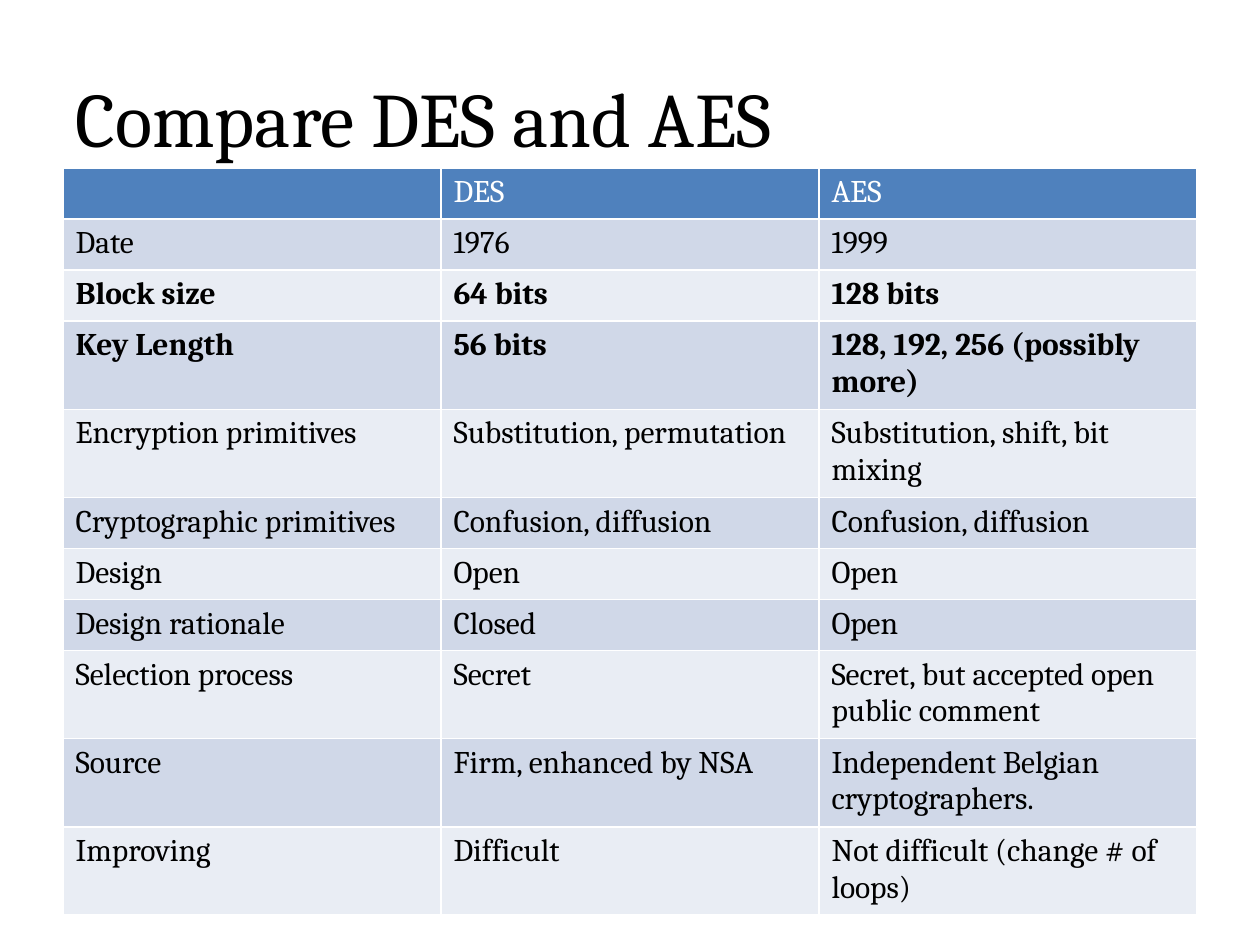
from typing import NamedTuple

from pptx import Presentation
from pptx.dml.color import RGBColor
from pptx.enum.text import MSO_ANCHOR
from pptx.util import Emu, Pt

PX = 914400 // 126
FONT = "Cambria"
COLORS = {
    "header": "4F81BD",
    "odd": "D0D8E8",
    "even": "E9EDF4",
    "light": "FFFFFF",
    "dark": "000000",
}


class Box(NamedTuple):
    x: int
    y: int
    w: int
    h: int


class Row(NamedTuple):
    topic: str
    des: str
    aes: str
    bold: bool = False

    def texts(self) -> tuple[str, str, str]:
        return self.topic, self.des, self.aes


TITLE = Box(63, 38, 1134, 157)
TABLE = Box(63, 168, 1134, 561)
ROWS = [
    Row("", "DES", "AES"),
    Row("Date", "1976", "1999"),
    Row("Block size", "64 bits", "128 bits", True),
    Row("Key Length", "56 bits", "128, 192, 256 (possibly more)", True),
    Row("Encryption primitives", "Substitution, permutation",
        "Substitution, shift, bit mixing"),
    Row("Cryptographic primitives", "Confusion, diffusion", "Confusion, diffusion"),
    Row("Design", "Open", "Open"),
    Row("Design rationale", "Closed", "Open"),
    Row("Selection process", "Secret", "Secret, but accepted open public comment"),
    Row("Source", "Firm, enhanced by NSA", "Independent Belgian cryptographers."),
    Row("Improving", "Difficult", "Not difficult (change # of loops)"),
]


def px(n: int) -> Emu:
    return Emu(n * PX)


def rgb(name: str) -> RGBColor:
    return RGBColor.from_string(COLORS[name])


def style(p, size: int, color: str, bold: bool = False) -> None:
    p.font.name = FONT
    p.font.size = Pt(size)
    p.font.bold = bold
    p.font.color.rgb = rgb(color)


def add_title(s, box: Box, text: str) -> None:
    tf = s.shapes.add_textbox(*map(px, box)).text_frame
    tf.word_wrap = True
    tf.vertical_anchor = MSO_ANCHOR.MIDDLE
    p = tf.paragraphs[0]
    p.text = text
    style(p, 44, "dark")


def add_comparison(s, box: Box, rows: list[Row]) -> None:
    table = s.shapes.add_table(len(rows), 3, *map(px, box)).table
    for i, row in enumerate(rows):
        fill = "header" if i == 0 else "odd" if i % 2 else "even"
        for cell, text in zip(table.rows[i].cells, row.texts()):
            cell.fill.solid()
            cell.fill.fore_color.rgb = rgb(fill)
            p = cell.text_frame.paragraphs[0]
            if text:
                p.text = text
            style(p, 18, "light" if i == 0 else "dark", row.bold)


def main() -> None:
    prs = Presentation()
    prs.slide_width, prs.slide_height = px(1260), px(945)
    s = prs.slides.add_slide(prs.slide_layouts[6])
    add_title(s, TITLE, "Compare DES and AES")
    add_comparison(s, TABLE, ROWS)
    prs.save("out.pptx")


if __name__ == "__main__":
    main()
